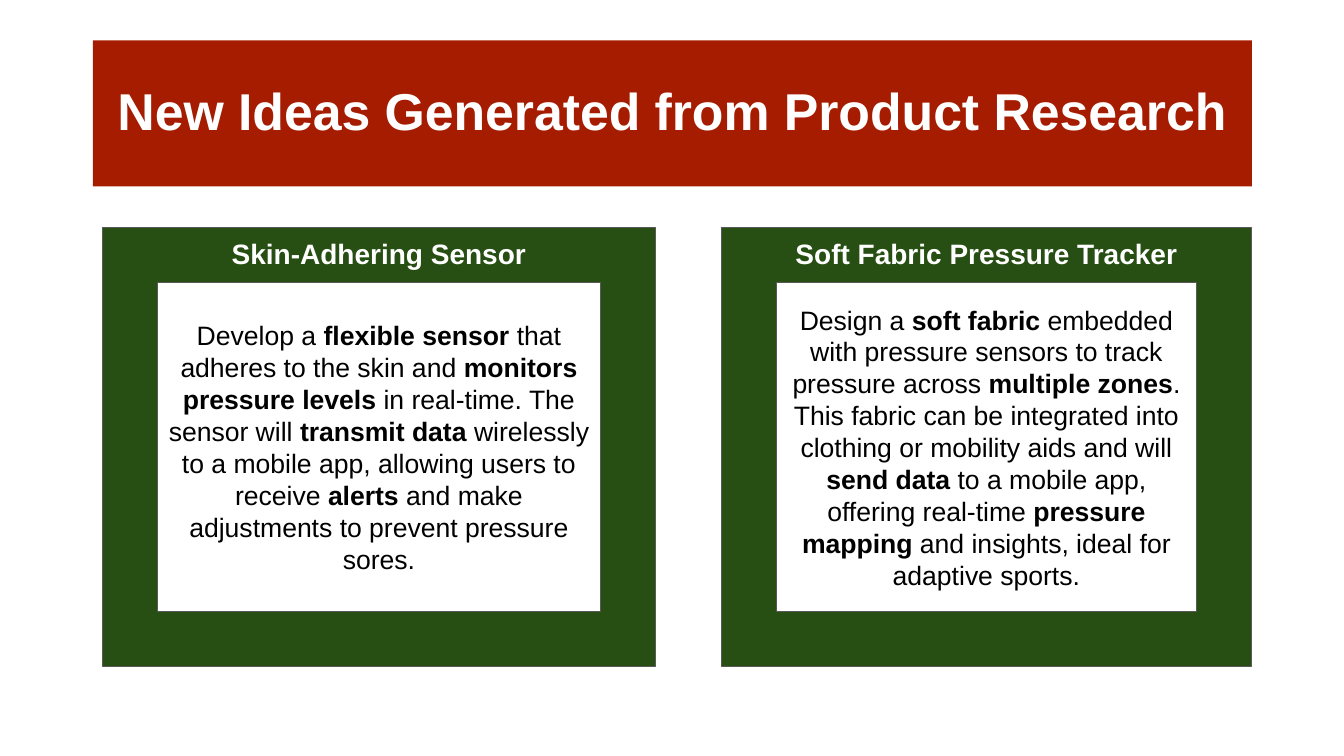
from pptx import Presentation
from pptx.dml.color import RGBColor
from pptx.enum.shapes import MSO_SHAPE
from pptx.enum.text import MSO_ANCHOR, MSO_AUTO_SIZE, PP_ALIGN
from pptx.util import Cm, Pt

FRAME = MSO_SHAPE.FRAME
MIDDLE = MSO_ANCHOR.MIDDLE
NO_FIT = MSO_AUTO_SIZE.NONE
CENTER = PP_ALIGN.CENTER

WHITE, BLACK, RED, GREEN, GREY = "FFFFFF", "000000", "A61C00", "274E13", "595959"


def color(value):
    return RGBColor.from_string(value)


class IdeaSlide:
    font = "Arial"
    inset = 0.25
    card_top, card_height = 5.74, 11.05
    label_height = 1.3

    def __init__(self, deck):
        self.page = deck.slides.add_slide(deck.slide_layouts[5])

    def add_text(self, box, text, size, ink, bold=False, inset_y=inset, spacing=1.0):
        """Fill a box with centred text; asterisks switch bold on and off."""
        frame = box.text_frame
        frame.word_wrap = True
        frame.auto_size = NO_FIT
        frame.vertical_anchor = MIDDLE
        frame.margin_left = frame.margin_right = Cm(self.inset)
        frame.margin_top = frame.margin_bottom = Cm(inset_y)
        para = frame.paragraphs[0]
        para.alignment = CENTER
        para.line_spacing = spacing
        for index, part in enumerate(text.split("*")):
            span = para.add_run()
            span.text = part
            span.font.name = self.font
            span.font.size = Pt(size)
            span.font.bold = bold or index % 2 == 1
            span.font.color.rgb = color(ink)

    def title(self, text):
        box = self.page.shapes.title
        box.left, box.top, box.width, box.height = Cm(2.34), Cm(1.02), Cm(29.21), Cm(3.68)
        box.fill.solid()
        box.fill.fore_color.rgb = color(RED)
        self.add_text(box, text, 37, WHITE, bold=True, inset_y=0.13, spacing=0.9)

    def card(self, left, width, text):
        box = self.page.shapes.add_shape(
            FRAME, Cm(left), Cm(self.card_top), Cm(width), Cm(self.card_height))
        box.adjustments[0] = 0.125
        box.shadow.inherit = False
        box.fill.solid()
        box.fill.fore_color.rgb = color(GREEN)
        box.line.color.rgb = color(GREY)
        box.line.width = Pt(0.75)
        self.add_text(box, text, 19, BLACK)

    def label(self, center, width, text):
        box = self.page.shapes.add_textbox(
            Cm(center - width / 2), Cm(self.card_top), Cm(width), Cm(self.label_height))
        self.add_text(box, text, 20, WHITE, bold=True)


# Each idea: card left, card width, label width, heading, description
IDEAS = [
    (2.59, 13.92, 12.5, "Skin-Adhering Sensor",
     "Develop a *flexible sensor* that adheres to the skin and *monitors pressure levels* "
     "in real-time. The sensor will *transmit data* wirelessly to a mobile app, allowing "
     "users to receive *alerts* and make adjustments to prevent pressure sores."),
    (18.19, 13.34, 10.26, "Soft Fabric Pressure Tracker",
     "Design a *soft fabric* embedded with pressure sensors to track pressure across "
     "*multiple zones*. This fabric can be integrated into clothing or mobility aids and "
     "will *send data* to a mobile app, offering real-time *pressure mapping* and insights, "
     "ideal for adaptive sports."),
]


def main():
    deck = Presentation()
    deck.slide_width, deck.slide_height = Cm(33.87), Cm(19.05)
    slide = IdeaSlide(deck)

    # Title banner
    slide.title("New Ideas Generated from Product Research")

    # Framed descriptions with headings on the top edge
    for left, width, label_width, heading, description in IDEAS:
        slide.card(left, width, description)
        slide.label(left + width / 2, label_width, heading)

    deck.save("out.pptx")


if __name__ == "__main__":
    main()
